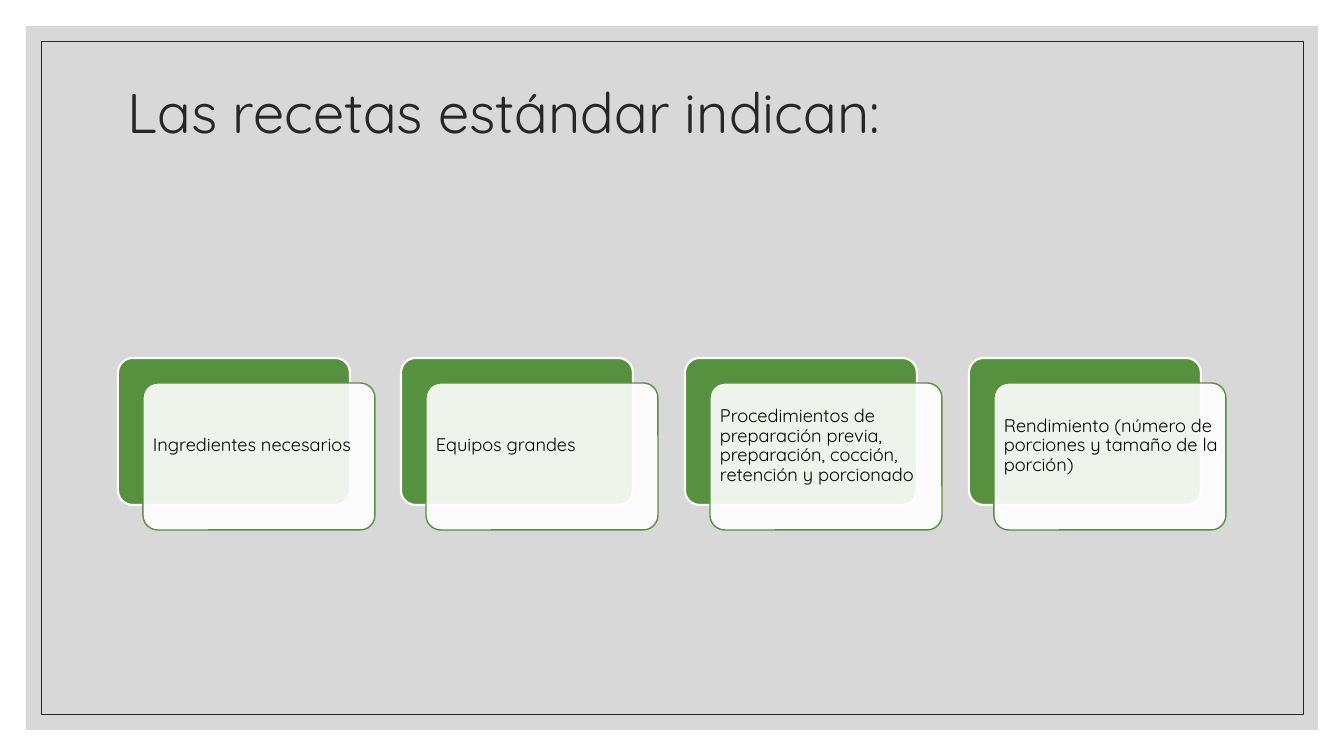
from pptx import Presentation
from pptx.dml.color import RGBColor
from pptx.enum.shapes import MSO_SHAPE as SHAPE
from pptx.enum.text import MSO_ANCHOR as ANCHOR, PP_ALIGN as ALIGN
from pptx.oxml.ns import qn
from pptx.util import Emu, Pt
from lxml import etree

EMU_PER_PX = 914400 / 100.8
COLORS = {"panel": "BFBFBF", "ink": "262626", "green": "57903F",
          "white": "FFFFFF", "black": "000000"}
FONT = "Quicksand"


def px(n):
    return Emu(round(n * EMU_PER_PX))


def rgb(name):
    return RGBColor.from_string(COLORS[name])


def write(tf, text, size=13, color="black", align=ALIGN.LEFT, spacing=0.9):
    p = tf.paragraphs[0]
    p.alignment, p.line_spacing = align, spacing
    r = p.add_run()
    r.text = text
    r.font.name, r.font.size = FONT, Pt(size)
    r.font.color.rgb = rgb(color)


class SlideBuilder:
    def __init__(self, prs):
        self.slide = prs.slides.add_slide(prs.slide_layouts[6])

    def box(self, x, y, w, h, fill=None, alpha=100, line=None, weight=1, radius=None):
        kind = SHAPE.RECTANGLE if radius is None else SHAPE.ROUNDED_RECTANGLE
        sp = self.slide.shapes.add_shape(kind, px(x), px(y), px(w), px(h))
        sp.shadow.inherit = False
        if radius is not None:
            sp.adjustments[0] = radius
        if fill:
            sp.fill.solid()
            sp.fill.fore_color.rgb = rgb(fill)
            if alpha < 100:
                clr = sp._element.spPr.find(qn("a:solidFill"))[0]
                etree.SubElement(clr, qn("a:alpha"), val=str(alpha * 1000))
        else:
            sp.fill.background()
        if line:
            sp.line.color.rgb = rgb(line)
            sp.line.width = Pt(weight)
        else:
            sp.line.fill.background()

    def text(self, x, y, w, h, text, inset=(10, 5), **style):
        tf = self.slide.shapes.add_textbox(px(x), px(y), px(w), px(h)).text_frame
        tf.word_wrap = True
        tf.vertical_anchor = ANCHOR.MIDDLE
        tf.margin_left = tf.margin_right = px(inset[0])
        tf.margin_top = tf.margin_bottom = px(inset[1])
        write(tf, text, **style)

    def card(self, x, y, label):
        w, h, offset = 232, 147, 25
        self.box(x, y, w, h, fill="green", line="white", weight=1.5, radius=0.1)
        x, y = x + offset, y + offset
        self.box(x, y, w, h, fill="white", alpha=90, line="green", radius=0.1)
        self.text(x + 5, y + 4, w - 8, h - 29, label, inset=(5, 5))


def main():
    prs = Presentation()
    prs.slide_width, prs.slide_height = px(1344), px(756)
    s = SlideBuilder(prs)

    # Background panel and frame
    s.box(26, 26, 1292, 704, fill="panel", alpha=60)
    s.box(41, 41, 1262, 673, line="ink", weight=0.5)

    # Title
    s.text(118, 71, 1109, 88, "Las recetas estándar indican:", size=40, color="ink")

    # Row of cards
    labels = ["Ingredientes necesarios",
              "Equipos grandes",
              "Procedimientos de preparación previa, preparación, cocción, "
              "retención y porcionado",
              "Rendimiento (número de porciones y tamaño de la porción)"]
    left, right = 118, 969
    for i, label in enumerate(labels):
        s.card(left + i * (right - left) // (len(labels) - 1), 358, label)

    prs.save("out.pptx")


if __name__ == "__main__":
    main()
